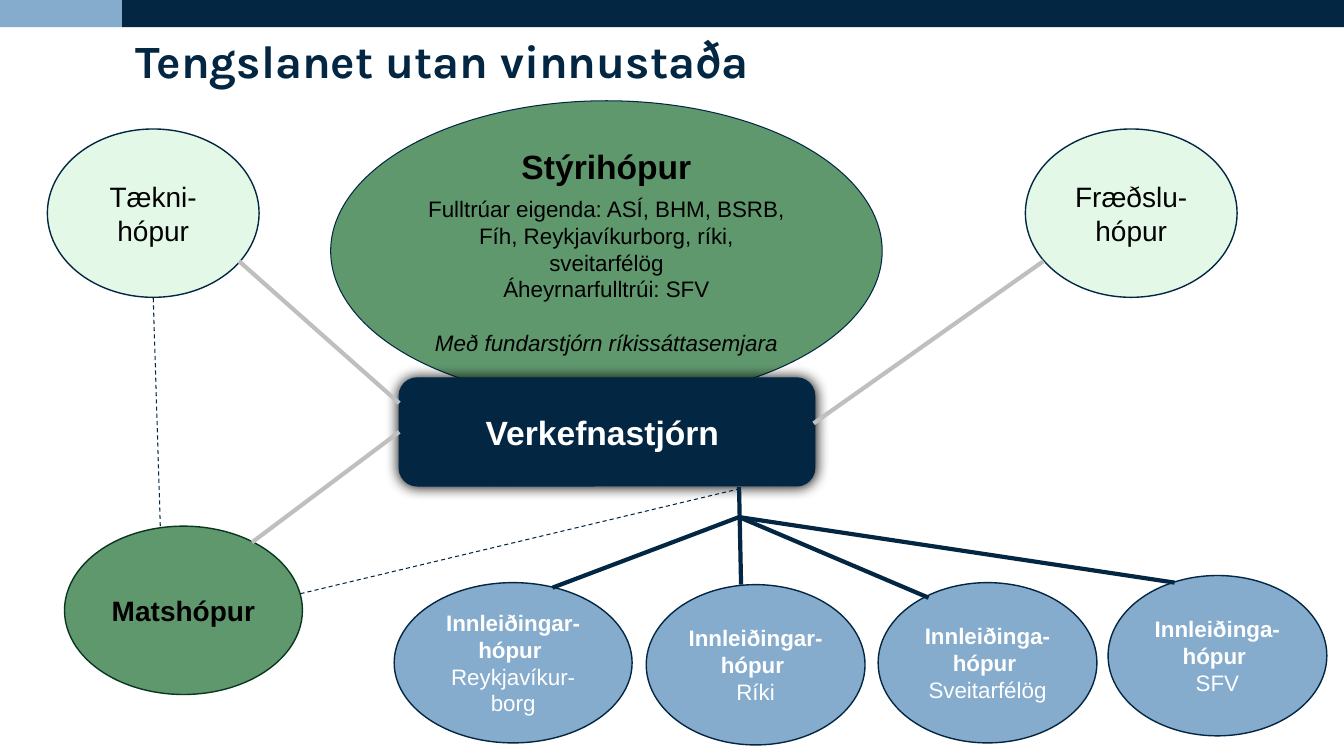
import pptx
import pptx.util
import pptx.dml.color
import pptx.enum.dml
import pptx.enum.shapes
import pptx.enum.text
import pptx.oxml
import pptx.oxml.ns

Inches, Pt = pptx.util.Inches, pptx.util.Pt
SHAPE = pptx.enum.shapes.MSO_SHAPE
NAVY, BLUE, GREEN, MINT, GREY = "032742", "85ABCD", "60986E", "E4F8E7", "BFBFBF"
BLACK, WHITE = "000000", "FFFFFF"


def rgb(value):
    return pptx.dml.color.RGBColor.from_string(value)


def add_effects(sp_pr, content=""):
    ns = pptx.oxml.ns.nsdecls("a")
    sp_pr.append(pptx.oxml.parse_xml(f"<a:effectLst {ns}>{content}</a:effectLst>"))


def add_text(p, text, size=16, color=BLACK, bold=False, italic=False, font="Arial",
             before=0, align=pptx.enum.text.PP_ALIGN.CENTER):
    p.alignment = align
    p.space_before = Pt(before)
    for i, line in enumerate(text.split("\n")):
        if i:
            p.add_line_break()
        r = p.add_run()
        r.text = line
        r.font.name, r.font.size = font, Pt(size)
        r.font.bold, r.font.italic = bold, italic
        r.font.color.rgb = rgb(color)


def add_block(s, kind, box, fill, line=None, width=1):
    sp = s.shapes.add_shape(kind, *map(Inches, box))
    sp.shadow.inherit = False
    sp.fill.solid()
    sp.fill.fore_color.rgb = rgb(fill)
    if line:
        sp.line.color.rgb = rgb(line)
        sp.line.width = Pt(width)
    else:
        sp.line.fill.background()
    tf = sp.text_frame
    tf.word_wrap = True
    tf.vertical_anchor = pptx.enum.text.MSO_ANCHOR.MIDDLE
    return sp


def add_line(s, start, end, color=NAVY, width=3, dashed=False):
    line = s.shapes.add_connector(pptx.enum.shapes.MSO_CONNECTOR.STRAIGHT,
                                  *map(Inches, (*start, *end)))
    line.line.color.rgb = rgb(color)
    line.line.width = Pt(width)
    if dashed:
        line.line.dash_style = pptx.enum.dml.MSO_LINE.DASH
    add_effects(line._element.spPr)
    return line


def add_header(s, box):
    x, y, w, h = box
    accent = 1.21
    # Top band
    add_block(s, SHAPE.RECTANGLE, (x + accent, y, w - accent, 0.27), NAVY)
    add_block(s, SHAPE.RECTANGLE, (x, y, accent, 0.27), BLUE)
    # Title
    title = s.shapes.add_textbox(*map(Inches, (x + 1.25, y + 0.33, 10.83, h - 0.33)))
    title.text_frame.word_wrap = True
    p = title.text_frame.paragraphs[0]
    p.line_spacing = 0.9
    add_text(p, "Tengslanet utan vinnustaða", 33, NAVY, bold=True, font="Karla",
             before=10, align=pptx.enum.text.PP_ALIGN.LEFT)


def add_steering(s, box):
    x, y, w, h = box
    # Steering group
    sp = add_block(s, SHAPE.OVAL, (x, y, w, 2.98), GREEN, NAVY, 0.75)
    tf = sp.text_frame
    add_text(tf.paragraphs[0], "Stýrihópur", 24, bold=True, before=6)
    add_text(tf.add_paragraph(), "Fulltrúar eigenda: ASÍ, BHM, BSRB, Fíh, Reykjavíkurborg, "
             "ríki, sveitarfélög\nÁheyrnarfulltrúi: SFV", before=6)
    add_text(tf.add_paragraph(), "Með fundarstjórn ríkissáttasemjara", italic=True, before=19)

    # Project board with a soft shadow
    board = add_block(s, SHAPE.ROUNDED_RECTANGLE, (x + 0.68, y + h - 1.07, 4.12, 1.07),
                      NAVY, NAVY)
    sp_pr = board._element.spPr
    sp_pr.remove(sp_pr.find(pptx.oxml.ns.qn("a:effectLst")))
    add_effects(sp_pr, '<a:outerShdw blurRad="127000" dist="0" dir="6540000" algn="ctr" '
                       'rotWithShape="0"><a:srgbClr val="000000"/></a:outerShdw>')
    add_text(board.text_frame.paragraphs[0], "Verkefnastjórn ", 24, WHITE, bold=True)
    return board


def add_side_groups(s, box, board):
    x, y, w, h = box
    # Group ovals
    groups = [
        ("Matshópur", (x + 0.17, y + h - 1.67, 2.36, 1.67), GREEN, "09361E", True),
        ("Tækni-hópur", (x, y, 2.1, 1.67), MINT, NAVY, False),
        ("Fræðslu-hópur", (x + w - 2.1, y, 2.1, 1.67), MINT, NAVY, False),
    ]
    for text, place, fill, line, bold in groups:
        sp = add_block(s, SHAPE.OVAL, place, fill, line)
        add_text(sp.text_frame.paragraphs[0], text, 20, bold=bold)

    # Links to the project board
    link = add_line(s, (x + 3.49, y + 3.01), (x + 2.03, y + 4.1), GREY)
    link.begin_connect(board, 1)
    add_line(s, (x + 3.49, y + 2.72), (x + 1.9, y + 1.31), GREY)
    add_line(s, (x + 9.88, y + 1.31), (x + 7.6, y + 2.92), GREY)

    # Dashed links from the evaluation group
    add_line(s, (x + 1.12, y + 3.94), (x + 1.05, y + 1.67), width=0.75, dashed=True)
    add_line(s, (x + 2.51, y + 4.61), (x + 6.86, y + 3.57), width=0.75, dashed=True)


def add_rollout_groups(s, box):
    x, y, w, h = box
    # Group name, owner, left, top, width, and where its branch ends
    groups = [
        ("Innleiðingar- hópur ", "Reykjavíkur-borg", 0, 0.95, 2.36, (1.57, 1)),
        ("Innleiðingar- hópur ", "Ríki", 2.5, 0.97, 2.17, (3.44, 0.97)),
        ("Innleiðinga- hópur ", "Sveitarfélög", 4.8, 0.95, 2.17, (5.3, 1.1)),
        ("Innleiðinga- hópur ", "SFV", w - 2.17, 0.88, 2.17, (7.74, 0.95)),
    ]
    for name, owner, left, top, width, _ in groups:
        sp = add_block(s, SHAPE.OVAL, (x + left, y + top, width, 1.59), BLUE, NAVY)
        tf = sp.text_frame
        add_text(tf.paragraphs[0], name, color=WHITE, bold=True)
        add_text(tf.add_paragraph(), owner, color=WHITE)

    # Trunk down to the second group, branches to the others
    for _, owner, _, _, _, (dx, dy) in groups:
        start = 0 if owner == "Ríki" else 0.3
        add_line(s, (x + 3.42, y + start), (x + dx, y + dy))


def main():
    prs = pptx.Presentation()
    prs.slide_width, prs.slide_height = Inches(13.33), Inches(7.5)
    s = prs.slides.add_slide(prs.slide_layouts[6])
    add_header(s, (0, 0, 13.33, 1.19))
    board = add_steering(s, (3.28, 1, 5.47, 3.82))
    add_rollout_groups(s, (3.91, 4.83, 9.25, 2.56))
    add_side_groups(s, (0.47, 1.28, 11.8, 5.61), board)
    prs.save("out.pptx")


if __name__ == "__main__":
    main()
